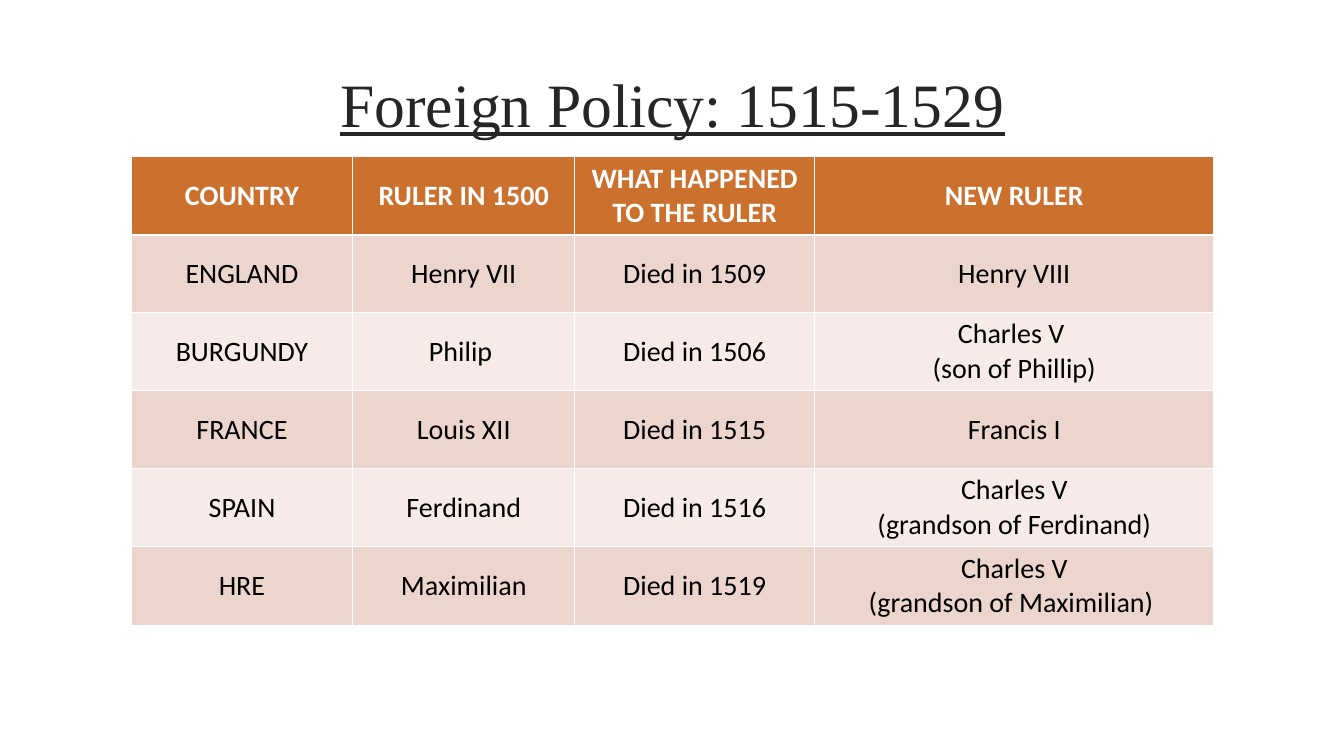
from dataclasses import dataclass
from pptx import Presentation
from pptx.dml.color import RGBColor as Color
from pptx.enum.text import MSO_ANCHOR as Anchor, MSO_AUTO_SIZE as Fit, PP_ALIGN as Align
from pptx.util import Inches, Pt


@dataclass
class Theme:
    ink: str = "262626"
    head: str = "CC702D"
    odd: str = "ECD5CD"
    even: str = "F6EBE8"
    white: str = "FFFFFF"
    black: str = "000000"
    serif: str = "Times New Roman"
    sans: str = "Calibri"
    big: int = 44
    body: int = 20


theme = Theme()


def add_run(para, text, face, size, tint, bold=False):
    run = para.add_run()
    run.text = text
    font = run.font
    font.name, font.size, font.bold = face, Pt(size), bold
    font.color.rgb = Color.from_string(tint)
    return run


deck = Presentation()
deck.slide_width, deck.slide_height = Inches(13.33), Inches(7.5)
slide = deck.slides.add_slide(deck.slide_layouts[5])

title = slide.shapes.title
title.left, title.top = Inches(1.42), Inches(0.52)
title.width, title.height = Inches(10.5), Inches(1.43)
frame = title.text_frame
frame.auto_size, frame.word_wrap = Fit.NONE, True
frame.vertical_anchor = Anchor.TOP
frame.margin_top = Inches(0.13)
para = frame.paragraphs[0]
para.alignment = Align.CENTER
run = add_run(para, "Foreign Policy: 1515-1529", theme.serif, theme.big, theme.ink)
run.font.underline = True

rows = [
    ("COUNTRY", "RULER IN 1500", "WHAT HAPPENED TO THE RULER", "NEW RULER"),
    ("ENGLAND", "Henry VII", "Died in 1509", "Henry VIII"),
    ("BURGUNDY", "Philip ", "Died in 1506", "Charles V \n(son of Phillip)"),
    ("FRANCE", "Louis XII", "Died in 1515", "Francis I"),
    ("SPAIN", "Ferdinand", "Died in 1516", "Charles V\n(grandson of Ferdinand)"),
    ("HRE", "Maximilian", "Died in 1519", "Charles V\n(grandson of Maximilian) "),
]
widths = [2.2, 2.2, 2.38, 3.96]

table = slide.shapes.add_table(
    len(rows), len(widths), Inches(1.3), Inches(1.55), Inches(sum(widths)), Inches(4.6)
).table
for col, width in zip(table.columns, widths):
    col.width = Inches(width)

for r, row in enumerate(rows):
    first = r == 0
    fill = theme.head if first else theme.odd if r % 2 else theme.even
    tint = theme.white if first else theme.black
    for c, text in enumerate(row):
        cell = table.cell(r, c)
        cell.fill.solid()
        cell.fill.fore_color.rgb = Color.from_string(fill)
        cell.vertical_anchor = Anchor.MIDDLE
        para = cell.text_frame.paragraphs[0]
        para.alignment = Align.CENTER
        for n, line in enumerate(text.split("\n")):
            if n:
                para.add_line_break()
            add_run(para, line, theme.sans, theme.body, tint, first)

deck.save("out.pptx")
